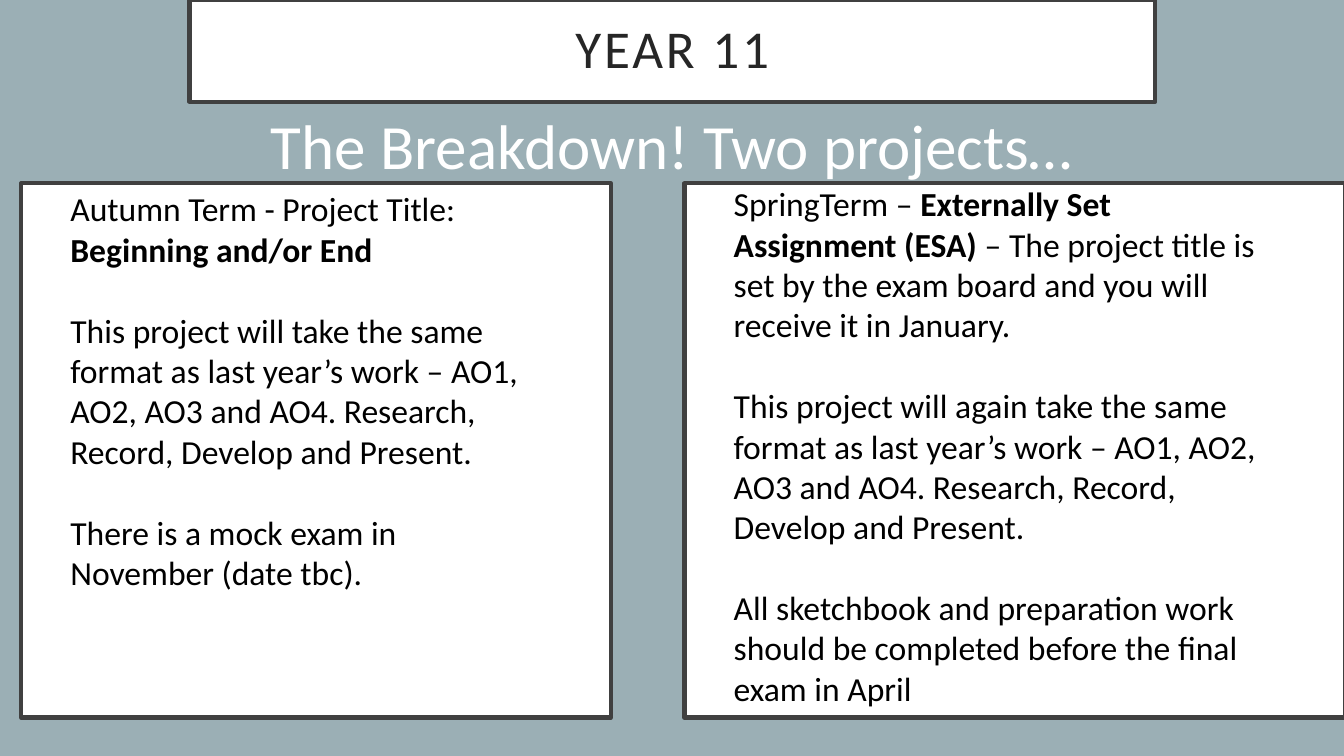
from dataclasses import dataclass

from pptx import Presentation
from pptx.dml.color import RGBColor
from pptx.enum.shapes import MSO_SHAPE
from pptx.enum.text import MSO_ANCHOR, PP_ALIGN
from pptx.shapes.base import BaseShape
from pptx.slide import Slide
from pptx.text.text import TextFrame, _Run
from pptx.util import Pt

RECTANGLE = MSO_SHAPE.RECTANGLE
MIDDLE = MSO_ANCHOR.MIDDLE
CENTER = PP_ALIGN.CENTER


@dataclass(frozen=True)
class Theme:
    font: str = "Calibri"
    background: RGBColor = RGBColor(0x9B, 0xAF, 0xB5)
    panel: RGBColor = RGBColor(0xFF, 0xFF, 0xFF)
    border: RGBColor = RGBColor(0x40, 0x40, 0x40)
    title: RGBColor = RGBColor(0x26, 0x26, 0x26)
    subtitle: RGBColor = RGBColor(0xFF, 0xFF, 0xFF)
    body: RGBColor = RGBColor(0, 0, 0)
    title_size: float = 38
    subtitle_size: float = 45
    body_size: float = 24
    border_width: float = 3
    paragraph_gap: float = 29


@dataclass(frozen=True)
class Box:
    left: float
    top: float
    width: float
    height: float

    def lengths(self) -> tuple[Pt, Pt, Pt, Pt]:
        return Pt(self.left), Pt(self.top), Pt(self.width), Pt(self.height)


@dataclass(frozen=True)
class Phrase:
    text: str
    bold: bool = False


@dataclass(frozen=True)
class Passage:
    phrases: tuple[Phrase, ...]
    gap_before: bool = False


@dataclass(frozen=True)
class TermCard:
    panel: Box
    text: Box
    passages: tuple[Passage, ...]


THEME = Theme()
TITLE_BOX = Box(135.4, 0, 689.8, 72.7)
SUBTITLE_BOX = Box(154.1, 72.7, 651.6, 97.9)
PROJECT_FORMAT = "format as last year’s work – AO1, AO2, AO3 and AO4. Research, Record, Develop and Present."

TERM_CARDS = (
    TermCard(
        Box(15.1, 131, 421.2, 381.6),
        Box(43.2, 131, 348.5, 298.1),
        (
            Passage((Phrase("Autumn Term - Project Title:"),)),
            Passage((Phrase("Beginning and/or End", True),)),
            Passage((Phrase(f"This project will take the same {PROJECT_FORMAT}"),), True),
            Passage((Phrase("There is a mock exam in November (date tbc)."),), True),
        ),
    ),
    TermCard(
        Box(488.9, 131, 471.6, 381.6),
        Box(517, 127.4, 390.2, 385.2),
        (
            Passage((
                Phrase("SpringTerm – "),
                Phrase("Externally Set Assignment (ESA) ", True),
                Phrase("– The project title is set by the exam board and you will receive it in January."),
            )),
            Passage((Phrase(f"This project will again take the same {PROJECT_FORMAT}"),), True),
            Passage((Phrase(
                "All sketchbook and preparation work should be completed before the final exam in April"
            ),), True),
        ),
    ),
)


def format_run(run: _Run, size: float, color: RGBColor, bold: bool = False) -> None:
    """Apply the theme font to a run."""
    run.font.name = THEME.font
    run.font.size = Pt(size)
    run.font.bold = bold
    run.font.color.rgb = color


def add_panel(slide: Slide, box: Box) -> BaseShape:
    """Add a bordered white rectangle."""
    shape = slide.shapes.add_shape(RECTANGLE, *box.lengths())
    shape.shadow.inherit = False
    shape.fill.solid()
    shape.fill.fore_color.rgb = THEME.panel
    shape.line.color.rgb = THEME.border
    shape.line.width = Pt(THEME.border_width)
    return shape


def add_text_frame(slide: Slide, box: Box) -> TextFrame:
    """Add a wrapping text box and return its frame."""
    frame = slide.shapes.add_textbox(*box.lengths()).text_frame
    frame.word_wrap = True
    return frame


def add_title(slide: Slide) -> None:
    """Add the letter-spaced title in its panel."""
    frame = add_panel(slide, TITLE_BOX).text_frame
    frame.text = "YEAR 11"
    frame.word_wrap = True
    frame.vertical_anchor = MIDDLE
    frame.margin_left = frame.margin_right = Pt(21.6)
    frame.margin_top = frame.margin_bottom = Pt(14.4)
    paragraph = frame.paragraphs[0]
    paragraph.alignment = CENTER
    paragraph.line_spacing = 0.9
    run = paragraph.runs[0]
    format_run(run, THEME.title_size, THEME.title)
    run.font._element.set("spc", "200")


def add_subtitle(slide: Slide) -> None:
    """Add the centred subtitle."""
    frame = add_text_frame(slide, SUBTITLE_BOX)
    frame.text = "The Breakdown! Two projects…"
    paragraph = frame.paragraphs[0]
    paragraph.alignment = CENTER
    format_run(paragraph.runs[0], THEME.subtitle_size, THEME.subtitle)


def add_term_card(slide: Slide, card: TermCard) -> None:
    """Add a term's panel and its passages."""
    add_panel(slide, card.panel)
    frame = add_text_frame(slide, card.text)
    for index, passage in enumerate(card.passages):
        paragraph = frame.add_paragraph() if index else frame.paragraphs[0]
        if passage.gap_before:
            paragraph.space_before = Pt(THEME.paragraph_gap)
        for phrase in passage.phrases:
            run = paragraph.add_run()
            run.text = phrase.text
            format_run(run, THEME.body_size, THEME.body, phrase.bold)


def main() -> None:
    """Build and save the slide."""
    presentation = Presentation()
    presentation.slide_width = Pt(960)
    presentation.slide_height = Pt(540)
    slide = presentation.slides.add_slide(presentation.slide_layouts[6])
    slide.background.fill.solid()
    slide.background.fill.fore_color.rgb = THEME.background
    add_title(slide)
    add_subtitle(slide)
    for card in TERM_CARDS:
        add_term_card(slide, card)
    presentation.save("out.pptx")


if __name__ == "__main__":
    main()
